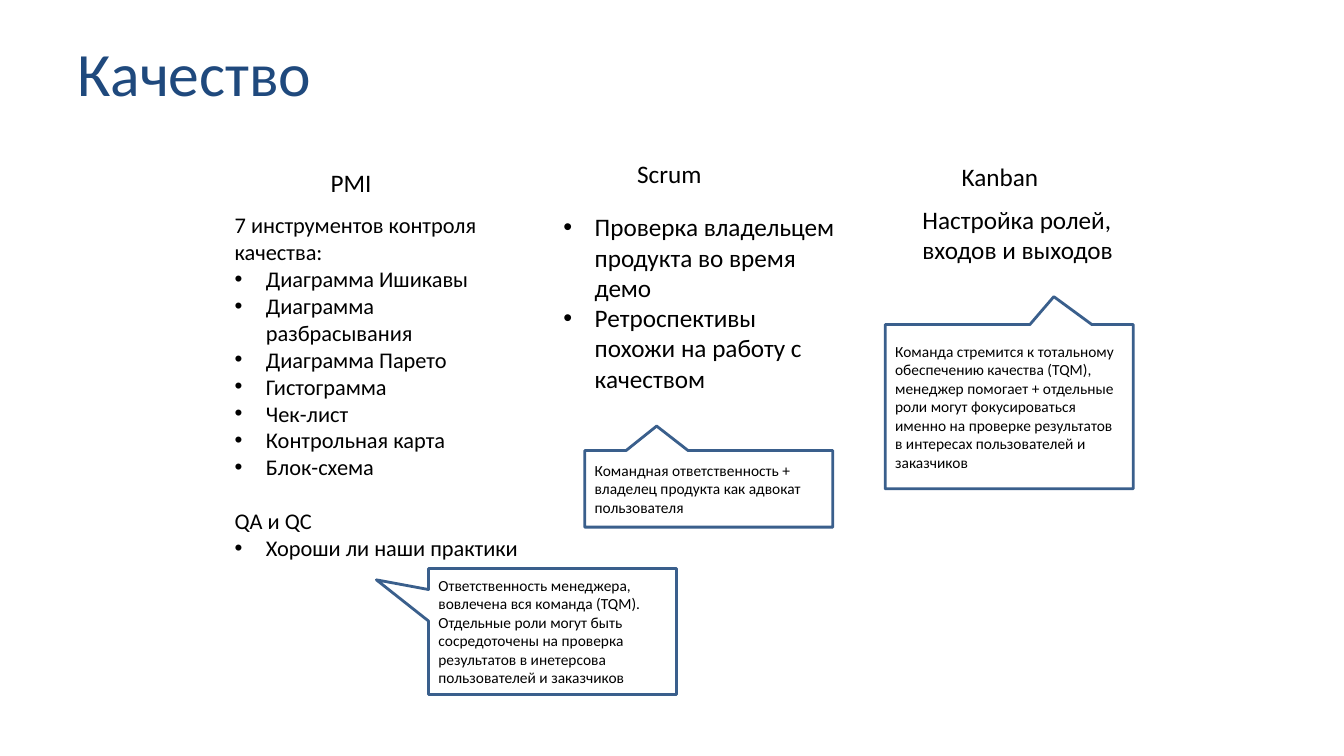
from dataclasses import dataclass

from lxml import etree
from pptx import Presentation
from pptx import util as u
from pptx.dml.color import RGBColor
from pptx.enum import shapes, text
from pptx.oxml import ns

BLACK = RGBColor(0x00, 0x00, 0x00)
NAVY = RGBColor(0x1F, 0x49, 0x7D)
OUTLINE = RGBColor(0x3A, 0x5F, 0x8C)
FONT = "Calibri"
INDENT = u.Inches(0.31)
CALLOUT_WIDTH = 2.46


@dataclass(frozen=True)
class Line:
    words: str
    bullet: bool = False
    space_before: float = 0


@dataclass(frozen=True)
class TextBlock:
    left: float
    top: float
    width: float
    height: float
    size: int
    lines: tuple[Line, ...]
    color: RGBColor = BLACK
    wrap: bool = True


@dataclass(frozen=True)
class Callout:
    left: float
    top: float
    height: float
    tip: tuple[float, float]
    words: str


def bullets(*items: str) -> tuple[Line, ...]:
    return tuple(Line(item, bullet=True) for item in items)


TEXT_BLOCKS = (
    # Title
    TextBlock(0.67, 0.3, 12, 1.25, 44, (Line("Качество"),), NAVY),
    # Column headings
    TextBlock(3.18, 1.61, 0.61, 0.4, 18, (Line("PMI"),), wrap=False),
    TextBlock(6.22, 1.52, 0.85, 0.4, 18, (Line("Scrum"),), wrap=False),
    TextBlock(9.44, 1.55, 0.97, 0.4, 18, (Line("Kanban"),), wrap=False),
    # Column texts
    TextBlock(2.23, 2.05, 3.06, 3.6, 16, (
        Line("7 инструментов контроля качества:"),
        *bullets("Диаграмма Ишикавы", "Диаграмма разбрасывания",
                 "Диаграмма Парето", "Гистограмма", "Чек-лист",
                 "Контрольная карта", "Блок-схема"),
        Line("QA и QC", space_before=19.5),
        *bullets("Хороши ли наши практики"),
    )),
    TextBlock(5.49, 2.05, 2.91, 1.92, 18, bullets(
        "Проверка владельцем продукта во время демо",
        "Ретроспективы похожи на работу с качеством",
    )),
    TextBlock(9.05, 1.98, 2.12, 0.71, 18,
              (Line("Настройка ролей, входов и выходов"),)),
)

CALLOUTS = (
    Callout(4.25, 5.64, 1.25, (-0.71, -0.41),
            "Ответственность менеджера, вовлечена вся команда (TQM). "
            "Отдельные роли могут быть сосредоточены на проверка "
            "результатов в инетерсова пользователей и заказчиков"),
    Callout(5.8, 4.47, 0.76, (-0.21, -0.82),
            "Командная ответственность + владелец продукта "
            "как адвокат пользователя"),
    Callout(8.78, 3.22, 1.63, (0.18, -0.67),
            "Команда стремится к тотальному обеспечению качества (TQM), "
            "менеджер помогает + отдельные роли могут фокусироваться именно "
            "на проверке результатов в интересах пользователей и заказчиков"),
)


def add_bullet(paragraph) -> None:
    properties = paragraph._p.get_or_add_pPr()
    properties.set("marL", str(INDENT))
    properties.set("indent", str(-INDENT))
    etree.SubElement(properties, ns.qn("a:buFont")).set("typeface", "Arial")
    etree.SubElement(properties, ns.qn("a:buChar")).set("char", "•")


def fill_text(frame, lines: tuple[Line, ...], size: int, color: RGBColor) -> None:
    font_format = {"name": FONT, "size": u.Pt(size)}
    for index, line in enumerate(lines):
        paragraph = frame.add_paragraph() if index else frame.paragraphs[0]
        paragraph.alignment = text.PP_ALIGN.LEFT
        if line.bullet:
            add_bullet(paragraph)
        if line.space_before:
            paragraph.space_before = u.Pt(line.space_before)
        run = paragraph.add_run()
        run.text = line.words
        for name, value in font_format.items():
            setattr(run.font, name, value)
        run.font.color.rgb = color


def add_text_block(slide, block: TextBlock) -> None:
    box = slide.shapes.add_textbox(
        u.Inches(block.left), u.Inches(block.top),
        u.Inches(block.width), u.Inches(block.height))
    box.text_frame.word_wrap = block.wrap
    fill_text(box.text_frame, block.lines, block.size, block.color)


def add_callout(slide, callout: Callout) -> None:
    shape = slide.shapes.add_shape(
        shapes.MSO_SHAPE.RECTANGULAR_CALLOUT,
        u.Inches(callout.left), u.Inches(callout.top),
        u.Inches(CALLOUT_WIDTH), u.Inches(callout.height))
    for index, offset in enumerate(callout.tip):
        shape.adjustments[index] = offset
    shape.shadow.inherit = False
    shape.fill.background()
    shape.line.color.rgb = OUTLINE
    shape.line.width = u.Pt(2)
    frame_format = {"word_wrap": True, "vertical_anchor": text.MSO_ANCHOR.MIDDLE}
    for name, value in frame_format.items():
        setattr(shape.text_frame, name, value)
    fill_text(shape.text_frame, (Line(callout.words),), 11, BLACK)


def main() -> None:
    presentation = Presentation()
    presentation.slide_width = u.Inches(13.33)
    presentation.slide_height = u.Inches(7.5)
    slide = presentation.slides.add_slide(presentation.slide_layouts[6])
    for block in TEXT_BLOCKS:
        add_text_block(slide, block)
    for callout in CALLOUTS:
        add_callout(slide, callout)
    presentation.save("out.pptx")


if __name__ == "__main__":
    main()
